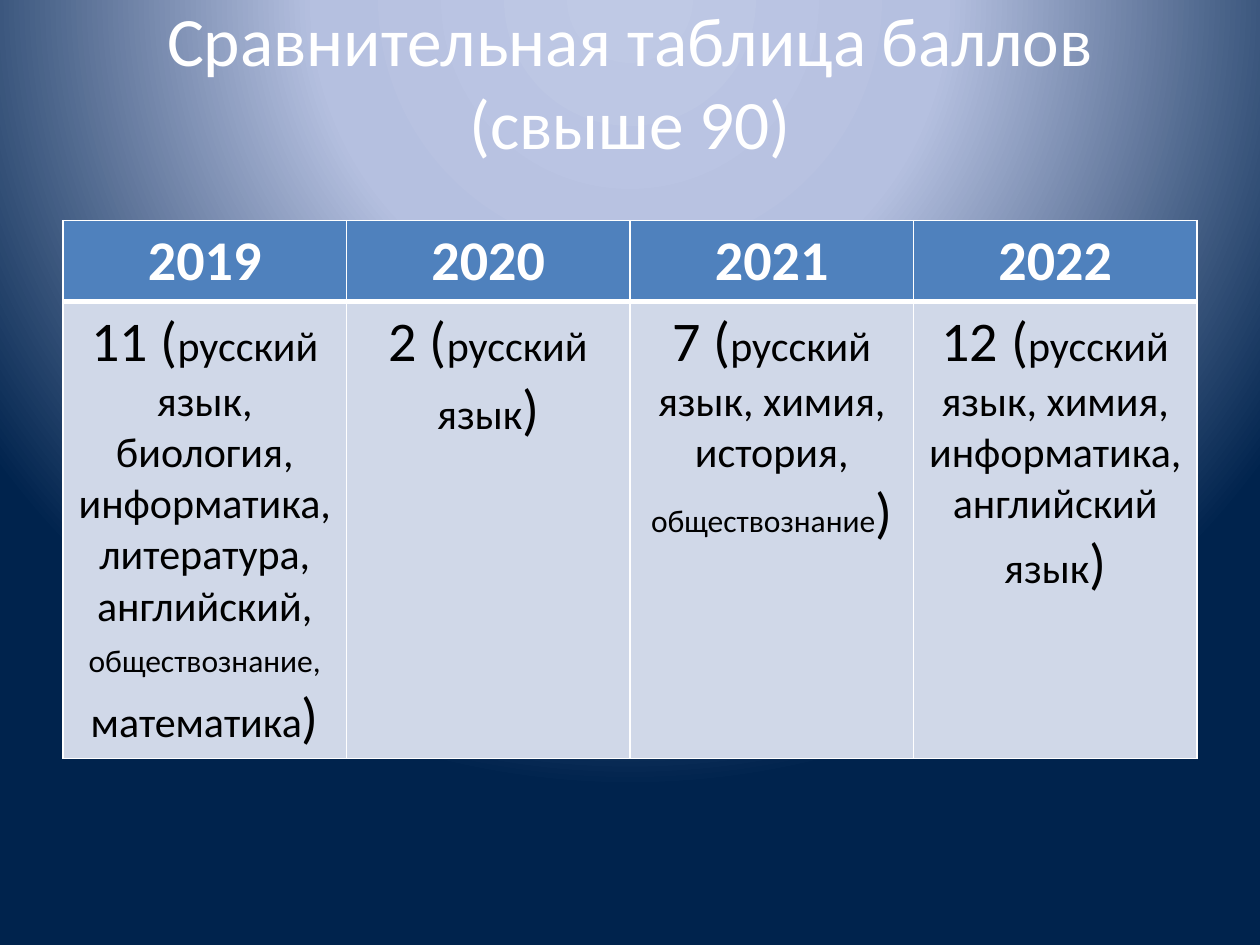
from pptx import Presentation
from pptx import oxml
from pptx.dml.color import RGBColor
from pptx.enum import text as t
from pptx.oxml import ns
from pptx.util import Inches, Pt

WHITE = RGBColor(0xFF, 0xFF, 0xFF)
BLACK = RGBColor(0, 0, 0)
BLUE = RGBColor(0x4F, 0x81, 0xBD)
PALE = RGBColor(0xD0, 0xD8, 0xE8)
GLOW = [(0, RGBColor(0xBF, 0xC9, 0xE5)),
        (40, RGBColor(0xB5, 0xC0, 0xE0)),
        (100, RGBColor(0x00, 0x23, 0x4D))]

BIG, MID, SMALL = 32, 24, 18
YEARS = ["2019", "2020", "2021", "2022"]
# Each cell is a list of paragraphs, each paragraph a list of (text, size).
SCORES = [
    [[("11 (", BIG), ("русский язык, биология, информатика, литература,", MID)],
     [("английский, ", MID), ("обществознание,", SMALL),
      (" математика", MID), (")", BIG)]],
    [[("2 (", BIG), ("русский язык", MID), (")", BIG)]],
    [[("7 (", BIG), ("русский язык, химия, история, ", MID),
      ("обществознание", SMALL), (")", BIG)]],
    [[("12 (", BIG),
      ("русский язык, химия, информатика, английский язык", MID), (")", BIG)]],
]


def set_all(item, form):
    for name, value in form.items():
        setattr(item, name, value)


def add_run(para, words, size, color, bold=False):
    run = para.add_run()
    run.text = words
    set_all(run.font, {"name": "Calibri", "size": Pt(size), "bold": bold})
    run.font.color.rgb = color


def paint_back(slide):
    """Fill the background with a radial glow centred above the slide."""
    stops = "".join(
        f'<a:gs pos="{pos * 1000}"><a:srgbClr val="{color}"/></a:gs>'
        for pos, color in GLOW)
    back = oxml.parse_xml(
        f'<p:bg {ns.nsdecls("p", "a")}><p:bgPr><a:gradFill rotWithShape="1">'
        f'<a:gsLst>{stops}</a:gsLst><a:path path="circle">'
        '<a:fillToRect l="50000" t="-80000" r="50000" b="180000"/></a:path>'
        '</a:gradFill><a:effectLst/></p:bgPr></p:bg>')
    slide.element.cSld.insert(0, back)


def add_title(slide, words):
    title = slide.shapes.title
    set_all(title, {"left": Inches(0.5), "top": Inches(0.3),
                    "width": Inches(9), "height": Inches(1.25)})
    frame = title.text_frame
    set_all(frame, {"word_wrap": True, "auto_size": t.MSO_AUTO_SIZE.NONE,
                    "vertical_anchor": t.MSO_ANCHOR.MIDDLE,
                    "margin_bottom": Inches(0.62)})
    para = frame.paragraphs[0]
    para.alignment = t.PP_ALIGN.CENTER
    add_run(para, words, 39.6, WHITE)


def edge_cell(cell, widths):
    """Draw white borders; widths are points by side, in schema order."""
    props = cell._tc.get_or_add_tcPr()
    for spot, (side, width) in enumerate(widths.items()):
        props.insert(spot, oxml.parse_xml(
            f'<a:ln{side} {ns.nsdecls("a")} w="{Pt(width)}"><a:solidFill>'
            f'<a:srgbClr val="{WHITE}"/></a:solidFill></a:ln{side}>'))


def fill_cell(cell, paras, fill, color, bold, widths):
    cell.fill.solid()
    cell.fill.fore_color.rgb = fill
    edge_cell(cell, widths)
    frame = cell.text_frame
    for spot, runs in enumerate(paras):
        para = frame.add_paragraph() if spot else frame.paragraphs[0]
        para.alignment = t.PP_ALIGN.CENTER
        for words, size in runs:
            add_run(para, words, size, color, bold)


def add_scores(slide):
    table = slide.shapes.add_table(
        2, len(YEARS), Inches(0.5), Inches(1.75), Inches(9), Inches(4.2)).table
    table.rows[0].height = Inches(0.64)
    table.rows[1].height = Inches(3.56)
    for col, (year, score) in enumerate(zip(YEARS, SCORES)):
        fill_cell(table.cell(0, col), [[(year, BIG)]], BLUE, WHITE, True,
                  {"L": 1, "R": 1, "T": 1, "B": 3})
        fill_cell(table.cell(1, col), score, PALE, BLACK, False,
                  {"L": 1, "R": 1, "T": 3, "B": 1})


def main():
    deck = Presentation()
    set_all(deck, {"slide_width": Inches(10), "slide_height": Inches(7.5)})
    slide = deck.slides.add_slide(deck.slide_layouts[5])
    paint_back(slide)
    add_title(slide, "Сравнительная таблица баллов (свыше 90)")
    add_scores(slide)
    deck.save("out.pptx")


if __name__ == "__main__":
    main()
